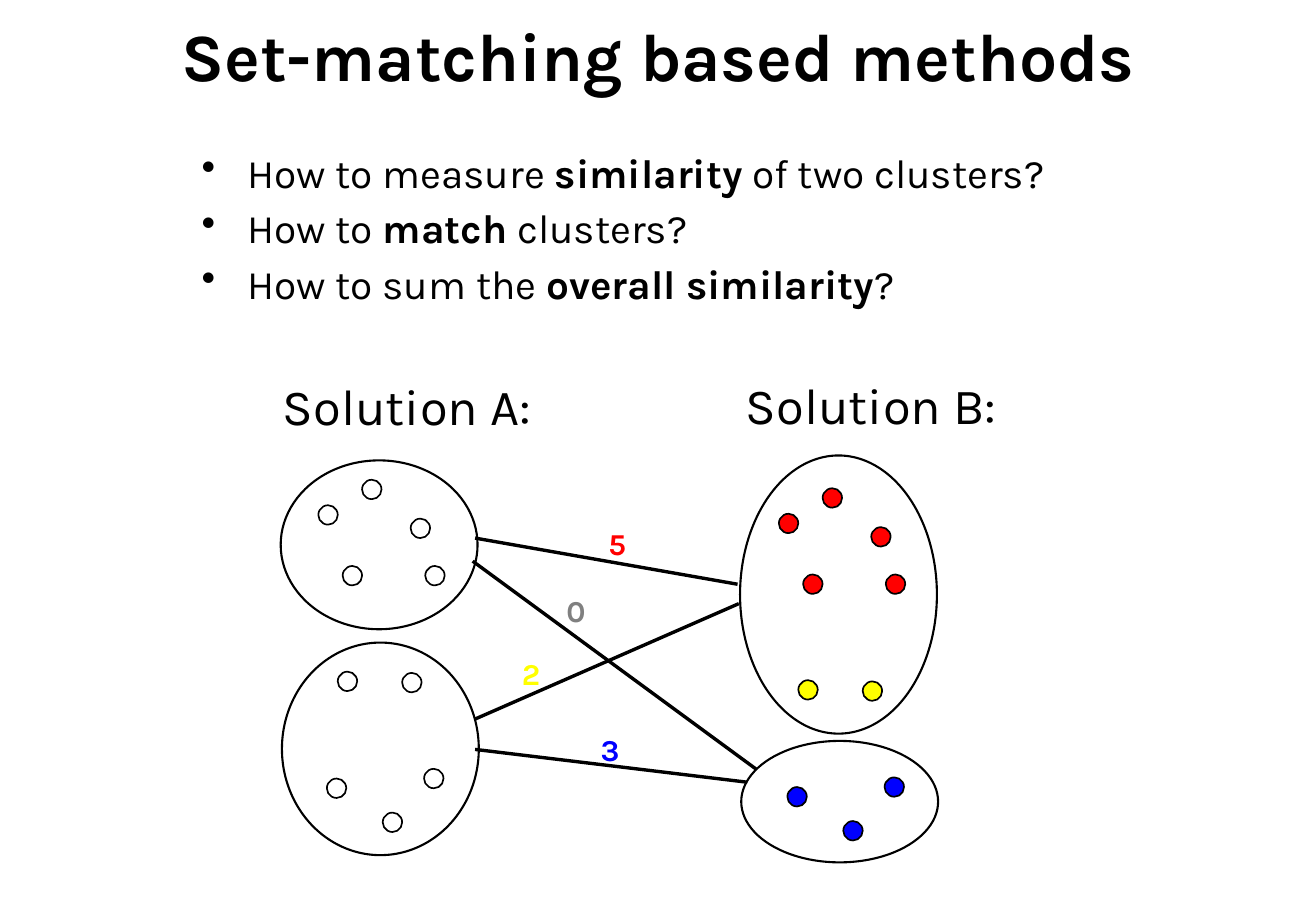
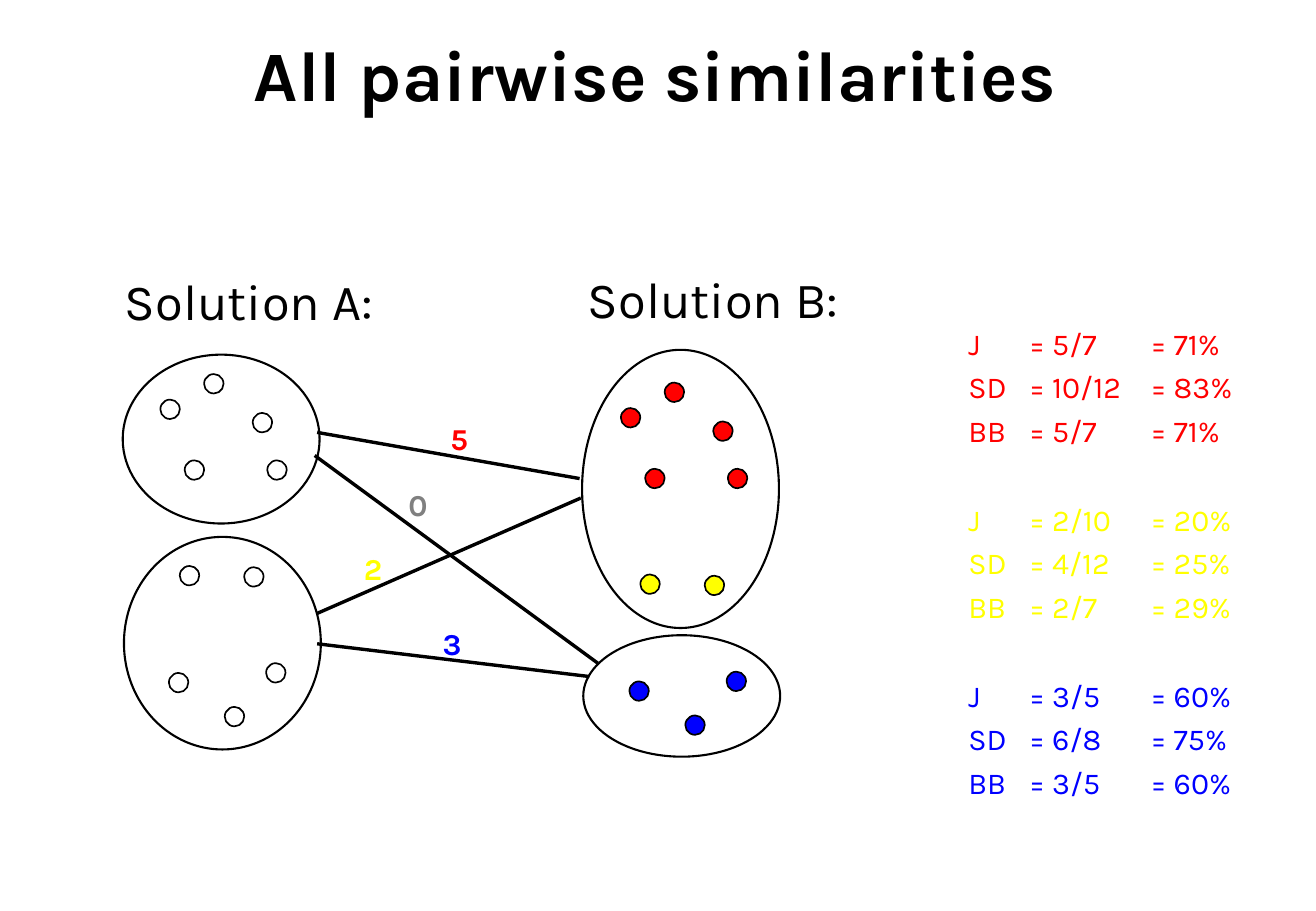
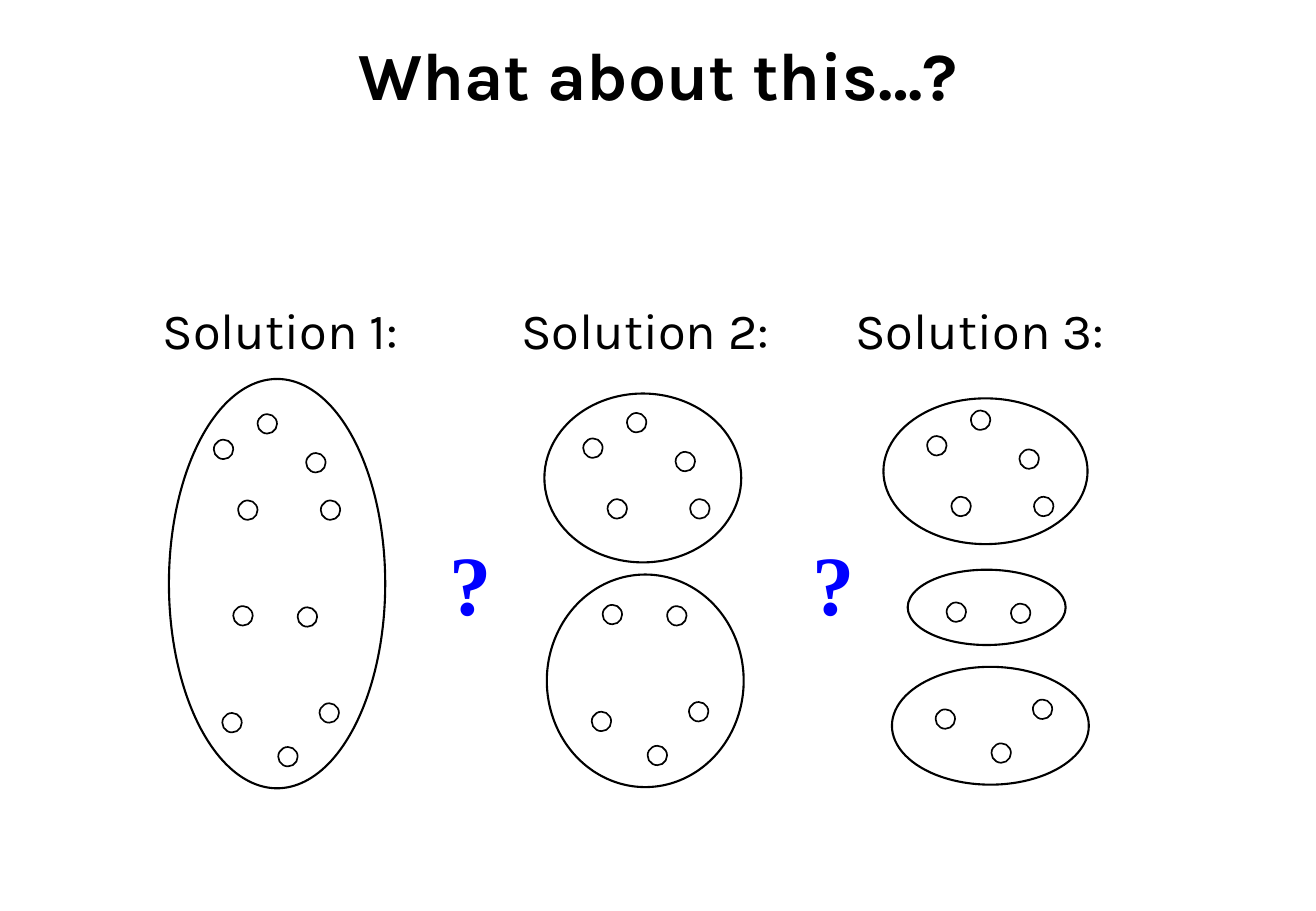
import lxml.etree
import pptx
import pptx.dml.color
import pptx.enum.shapes
import pptx.enum.text
import pptx.oxml.ns
import pptx.util

PX = 9144  # EMU in one px, 100 px to the inch
COLORS = {"ink": "000000", "paper": "FFFFFF", "red": "FF0000",
          "yellow": "FFFF00", "blue": "0000FF", "gray": "808080"}
FONT, MARK_FONT = "Karla", "Times New Roman"
ALIGN = pptx.enum.text.PP_ALIGN
ANCHOR = pptx.enum.text.MSO_ANCHOR
OVAL = pptx.enum.shapes.MSO_SHAPE.OVAL
STRAIGHT = pptx.enum.shapes.MSO_CONNECTOR.STRAIGHT
DOT = 16

# Points of one data set: three fixed groups, relative to its corner
FIVE = [(0, 21), (20, 71), (36, 0), (76, 32), (88, 71)]
TWO = [(16, 158), (69, 159)]
THREE = [(7, 246), (53, 274), (87, 238)]


def emu(*lengths):
    return [pptx.util.Emu(length * PX) for length in lengths]


def rgb(color):
    return pptx.dml.color.RGBColor.from_string(COLORS[color])


def add_mark(props, tag, **attributes):
    return lxml.etree.SubElement(props, pptx.oxml.ns.qn(tag), **attributes)


def write(frame, lines, size=18, color="ink", font=FONT, bold=False, align=ALIGN.LEFT,
          anchor=ANCHOR.TOP, spacing=None, after=None, bullet=None, indent=0, tabs=()):
    """Fill a text frame; parts of a line between asterisks switch the weight."""
    frame.word_wrap = True
    frame.auto_size = pptx.enum.text.MSO_AUTO_SIZE.NONE
    frame.vertical_anchor = anchor
    for number, line in enumerate(lines):
        paragraph = frame.add_paragraph() if number else frame.paragraphs[0]
        props = paragraph._p.get_or_add_pPr()
        if bullet:
            props.set("marL", str(indent * PX))
            props.set("indent", str(-indent * PX))
            add_mark(props, "a:buChar", char=bullet)
        if tabs:
            stops = add_mark(props, "a:tabLst")
            for tab in tabs:
                add_mark(stops, "a:tab", pos=str(tab * PX), algn="l")
        paragraph.alignment = align
        if spacing:
            paragraph.line_spacing = spacing
        if after:
            paragraph.space_after = pptx.util.Pt(after)
        for part, words in enumerate(line.split("*")):
            run = paragraph.add_run()
            run.text = words
            run.font.name = font
            run.font.size = pptx.util.Pt(size)
            run.font.bold = bold != bool(part % 2)
            run.font.color.rgb = rgb(color)


def add_text(slide, box, lines, **style):
    write(slide.shapes.add_textbox(*emu(*box)).text_frame, lines, **style)


def add_titled_slide(deck, text, box, size=40):
    slide = deck.slides.add_slide(deck.slide_layouts[5])
    title = slide.shapes.title
    title.left, title.top, title.width, title.height = emu(*box)
    write(title.text_frame, [text], size=size, bold=True, align=ALIGN.CENTER,
          anchor=ANCHOR.MIDDLE, spacing=0.9)
    return slide


def add_oval(slide, box, fill="paper", width=1.25):
    oval = slide.shapes.add_shape(OVAL, *emu(*box))
    oval.shadow.inherit = False
    oval.fill.solid()
    oval.fill.fore_color.rgb = rgb(fill)
    oval.line.color.rgb = rgb("ink")
    oval.line.width = pptx.util.Pt(width)


def add_link(slide, start, end):
    link = slide.shapes.add_connector(STRAIGHT, *emu(*start, *end))
    link.line.color.rgb = rgb("ink")
    link.line.width = pptx.util.Pt(2)
    add_mark(link._element.spPr, "a:effectLst")


def add_points(slide, left, top, fills=("paper", "paper", "paper")):
    for group, fill in zip((FIVE, TWO, THREE), fills):
        for x, y in group:
            add_oval(slide, (left + x, top + y, DOT, DOT), fill, 1)


def add_heading(slide, left, top, text):
    add_text(slide, (left, top, 233, 60), [text], size=30, anchor=ANCHOR.MIDDLE)


def add_matching(slide, left, top):
    """Two solutions, with the number of points their clusters share."""
    def at(x, y):
        return left + x, top + y

    add_heading(slide, *at(0, 1), "Solution A:")
    add_heading(slide, *at(381, 0), "Solution B:")
    # Clusters
    for x, y, width, height in [(8, 76, 162, 139), (9, 226, 162, 175),
                                (386, 72, 162, 229), (387, 307, 162, 100)]:
        add_oval(slide, (*at(x, y), width, height))
    add_points(slide, *at(39, 92))
    add_points(slide, *at(418, 99), ("red", "yellow", "blue"))
    # Links and shared counts
    for start, end, count, place, color in [
            ((168, 140), (384, 178), "5", (267, 119), "red"),
            ((166, 159), (399, 330), "0", (233, 174), "gray"),
            ((168, 289), (385, 194), "2", (196, 226), "yellow"),
            ((168, 314), (392, 341), "3", (261, 288), "blue")]:
        add_link(slide, at(*start), at(*end))
        add_text(slide, (*at(*place), 36, 42), [count], color=color, bold=True,
                 align=ALIGN.CENTER, spacing=1.19)


def add_scores(slide, left, top):
    """Similarity measures for each linked pair, one block a pair."""
    blocks = [("red", ["5/7", "10/12", "5/7"], [71, 83, 71]),
              ("yellow", ["2/10", "4/12", "2/7"], [20, 25, 29]),
              ("blue", ["3/5", "6/8", "3/5"], [60, 75, 60])]
    for row, (color, ratios, percents) in enumerate(blocks):
        lines = [f"{measure}\t= {ratio}\t= {percent}%" for measure, ratio, percent
                 in zip(("J", "SD", "BB"), ratios, percents)]
        add_text(slide, (left, top + row * 145, 251, 114), lines, color=color,
                 spacing=1.19, tabs=(50, 150))


def add_solution(slide, left, top, number, clusters, points):
    add_heading(slide, left, top, f"Solution {number}:")
    for x, y, width, height in clusters:
        add_oval(slide, (left + x, top + y, width, height))
    add_points(slide, left + points[0], top + points[1])


def build_methods(deck):
    slide = add_titled_slide(deck, "Set-matching based methods", (69, 21, 945, 57))
    add_text(slide, (156, 117, 768, 143),
             ["How to measure *similarity* of two clusters?",
              "How to *match* clusters?",
              "How to sum the *overall similarity*?"],
             size=24, after=4, bullet="•", indent=38)
    add_matching(slide, 223, 303)


def build_similarities(deck):
    slide = add_titled_slide(deck, "All pairwise similarities", (45, 21, 988, 87), size=42)
    add_matching(slide, 93, 216)
    add_scores(slide, 787, 257)


def build_question(deck):
    slide = add_titled_slide(deck, "What about this…?", (69, 36, 945, 57))
    top = 241
    add_solution(slide, 124, top, 1, [(15, 71, 178, 337)], (52, 100))
    add_solution(slide, 419, top, 2, [(29, 83, 162, 139), (31, 232, 162, 175)], (61, 99))
    add_solution(slide, 694, top, 3, [(33, 87, 168, 120), (53, 228, 130, 62),
                                      (40, 308, 162, 97)], (69, 97))
    for left in (354, 653):
        add_text(slide, (left, 442, 66, 55), ["?"], size=50, color="blue",
                 font=MARK_FONT, bold=True, align=ALIGN.CENTER, spacing=0.9)


def main():
    deck = pptx.Presentation()
    deck.slide_width, deck.slide_height = emu(1083, 750)
    build_methods(deck)
    build_similarities(deck)
    build_question(deck)
    deck.save("out.pptx")


if __name__ == "__main__":
    main()
